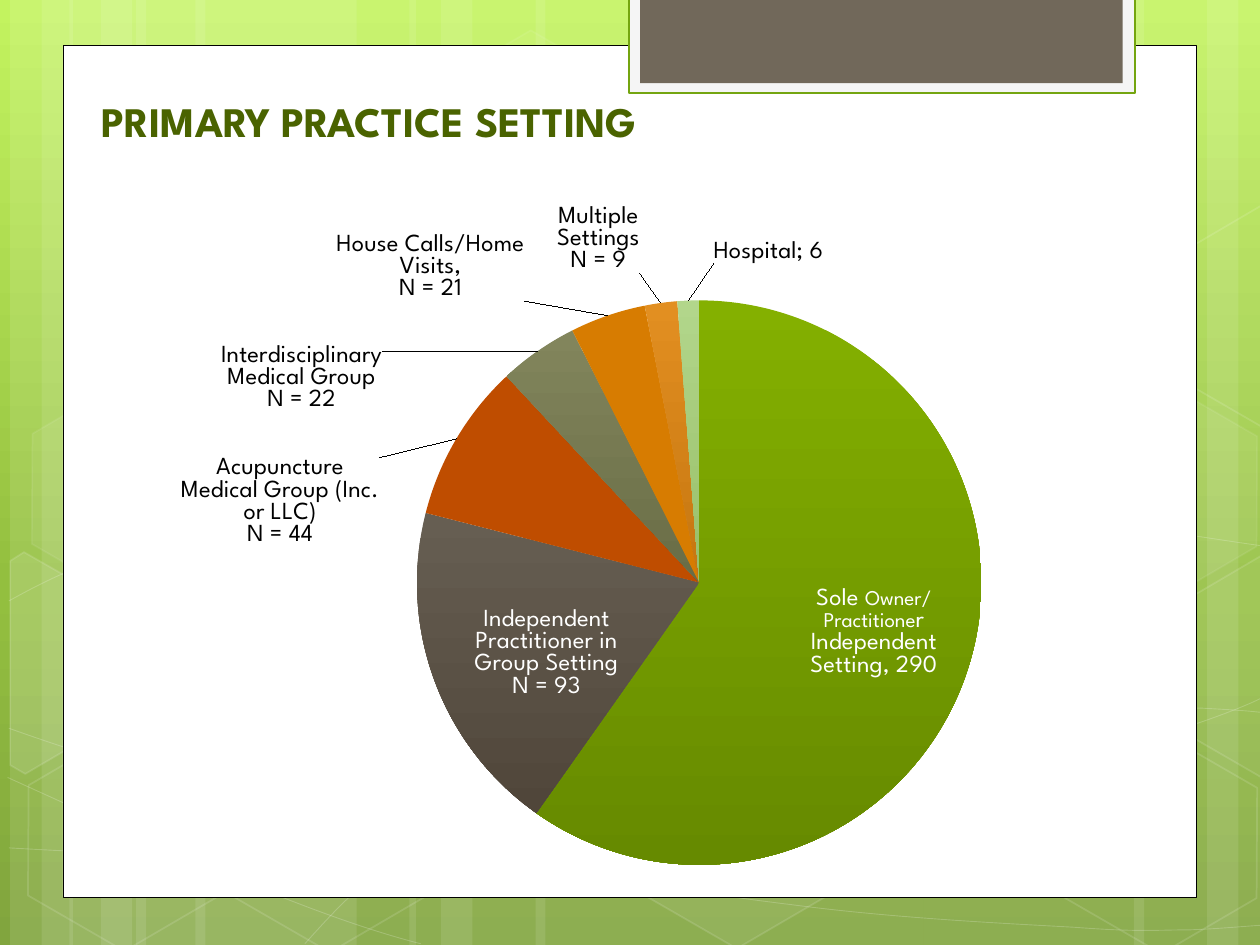
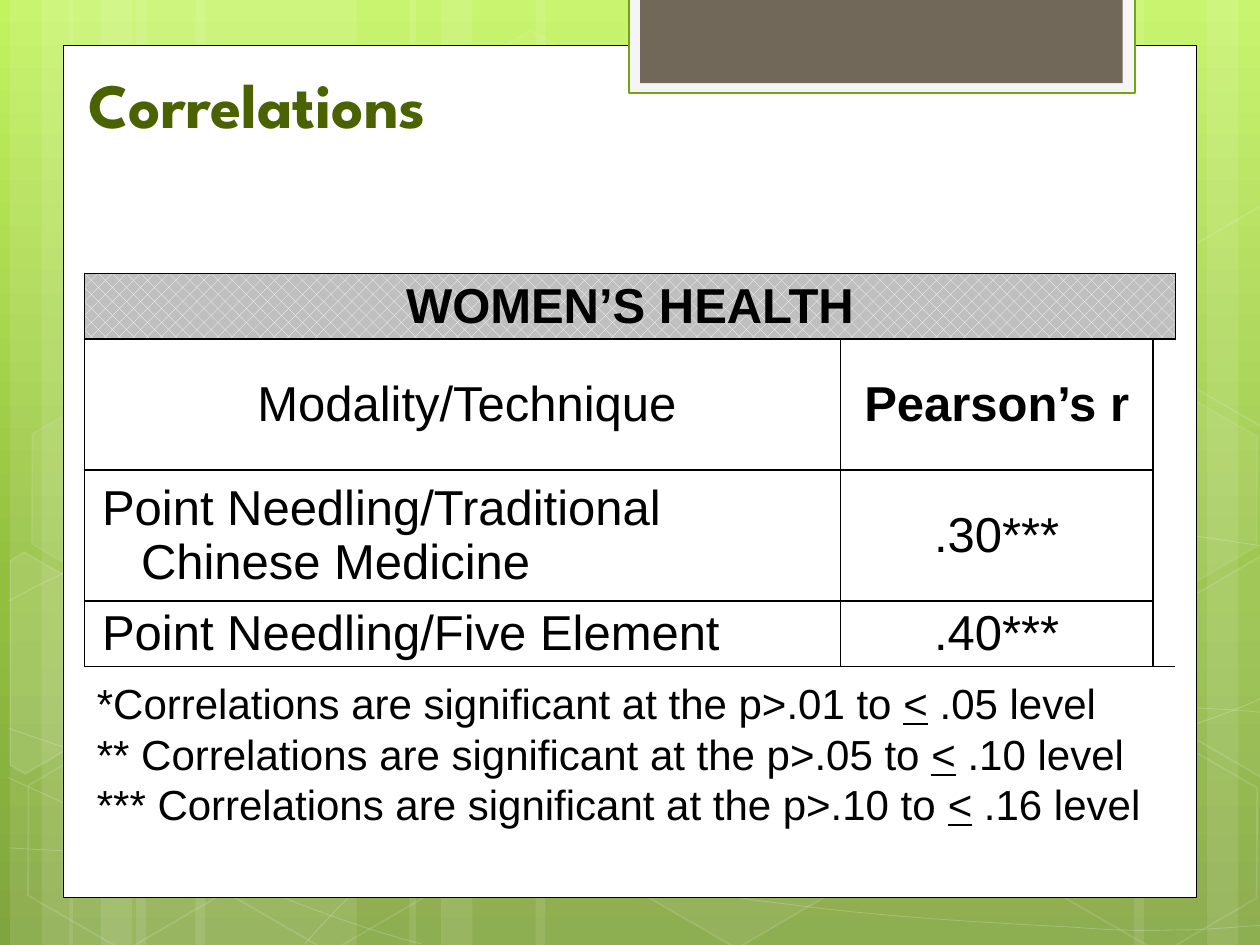
from copy import deepcopy
from math import cos, radians, sin

from lxml.etree import SubElement
from pptx import Presentation
from pptx.chart.data import CategoryChartData
from pptx.dml.color import RGBColor
from pptx.enum.chart import XL_CHART_TYPE as ChartType, XL_LABEL_POSITION as LabelPos
from pptx.enum.dml import MSO_PATTERN as Pattern
from pptx.enum.shapes import MSO_SHAPE as Shape
from pptx.enum.text import MSO_ANCHOR as Anchor, MSO_AUTO_SIZE as AutoSize, PP_ALIGN as Align
from pptx.oxml.ns import qn
from pptx.util import Inches, Pt

# Shared look
HEADING_FONT, BODY_FONT = "League Spartan", "Arial"
WHITE, BLACK, TITLE_GREEN = "FFFFFF", "000000", "4A6300"
BACKDROP_STOPS = [(0, "C3F35F"), (0.62, "93BF3F"), (1, "81A53E")]
BAND_ALPHA, CURVE_ALPHA, TILT = 10, 20, 30

# Backdrop: bands as (left, width)
BANDS = [(1.08, 1.75), (0.08, 0.5), (0.33, 0.83), (1.55, 1.75), (0.55, 0.5), (0.8, 0.83),
         (7.33, 1.75), (9.58, 0.5), (9, 0.83), (4.25, 3.08), (3.25, 0.5), (3.5, 0.83)]
# Bezier chains: a start point, then two handles and an end for every piece
CURVES = [
    [(0.07, 6.73), (0.61, 6.76), (1.15, 6.79), (1.9, 6.78), (2.65, 6.77), (3.58, 6.75),
     (4.58, 6.65), (5.58, 6.55), (7, 6.36), (7.92, 6.17), (8.83, 5.98), (9.77, 5.68),
     (10.07, 5.51)],
    [(0.07, 4.77), (0.36, 4.61), (0.65, 4.46), (1.21, 4.31), (1.78, 4.16), (2.59, 3.94),
     (3.47, 3.87), (4.36, 3.8), (5.44, 3.79), (6.54, 3.87), (7.64, 3.95), (9.47, 4.26),
     (10.07, 4.34)],
    [(0.06, 6.17), (1.27, 6.72), (2.47, 7.27), (3.34, 7.49)],
    [(0.07, 5.78), (0.38, 5.89), (0.7, 6), (1.28, 6.16), (1.86, 6.31), (2.73, 6.56),
     (3.57, 6.73), (4.4, 6.9), (5.45, 7.08), (6.28, 7.18), (7.11, 7.29), (8, 7.33),
     (8.53, 7.36), (9.05, 7.4), (9.19, 7.38), (9.45, 7.38), (9.71, 7.37), (9.89, 7.35),
     (10.07, 7.34)],
    [(2.42, 7.49), (2.6, 7.29), (2.78, 7.09), (3.02, 6.91), (3.26, 6.73), (3.6, 6.53),
     (3.88, 6.39), (4.16, 6.25), (4.33, 6.19), (4.7, 6.09), (5.06, 5.99), (5.73, 5.85),
     (6.08, 5.78), (6.44, 5.71), (6.49, 5.71), (6.8, 5.69), (7.11, 5.66), (7.6, 5.63),
     (7.94, 5.62), (8.29, 5.61), (8.86, 5.62), (8.86, 5.62), (9.08, 5.62), (9.3, 5.62),
     (9.53, 5.62), (9.71, 5.63), (9.88, 5.64), (9.97, 5.65), (10.06, 5.66), (10.03, 5.65),
     (10.06, 5.66)],
]
# Hexagons as (left, top, fill alpha, line alpha)
HEXAGONS = [(3.34, 0.36, 4, 8), (4.97, 5.89, 6, 12), (0.11, 5.91, None, 12),
            (0.14, 3.12, 7, 8), (1.74, 5.92, None, 12), (7.53, 4.53, 10, 12),
            (8.34, 5.93, None, 12), (8.34, 3.14, 7, 8)]
# Hexagons cut by the slide edge as (centre, corners, fill alpha)
CUT_HEXAGONS = [
    ((0.36, 5.35), [(0.08, 4.45), (0.19, 4.38), (0.96, 4.82), (0.95, 5.7), (0.2, 6.14),
                    (0.08, 6.07)], 10),
    ((9.85, 5.2), [(9.26, 4.85), (10.01, 4.41), (10.09, 4.46), (10.09, 6.13), (10.02, 6.17),
                   (9.26, 5.73)], 4),
    ((9.85, 2.41), [(9.26, 2.07), (10.01, 1.63), (10.1, 1.68), (10.09, 3.35), (10.02, 3.39),
                    (9.26, 2.95)], None),
]
# Panel and tab as (left, top, width, height, fill, line, line width)
PANELS = [(0.5, 0.36, 9, 6.76, WHITE, BLACK, 0.5),
          (4.99, -0.02, 4.02, 0.76, "F5F5F5", "74A510", 1.25),
          (5.08, -0.02, 3.83, 0.68, "71685A", None, 0)]

# Slide 1: category, count, colours from top to bottom, label colour,
# label position, label shift, label lines of (text, size)
SETTINGS = [
    ("Sole Owner/Practitioner Independent Setting", 290, ("84B000", "668A00"), WHITE,
     LabelPos.CENTER, (0.04, 0.01),
     [[("Sole ", 14), ("Owner/", 12)], [("Practitione", 12), ("r", 14)],
      [("Independent", 14)], [("Setting, 290", 14)]]),
    ("Independent Practitioner in Group Setting", 93, ("665E52", "50463A"), WHITE,
     LabelPos.CENTER, (-0.02, 0.03),
     [[("Independent", 14)], [("Practitioner in", 14)], [("Group Setting", 14)],
      [("N = 93", 14)]]),
    ("Acupuncture Medical Group (Inc. or LLC)", 44, ("BF4D00",), BLACK,
     LabelPos.OUTSIDE_END, (-0.07, 0.15),
     [[("Acupuncture Medical Group (Inc. or LLC)", 14)], [("N = 44", 14)]]),
    ("Interdisciplinary Medical Group", 22, ("82855C", "696D46"), BLACK,
     LabelPos.OUTSIDE_END, (-0.15, 0.09),
     [[("Interdisciplinary Medical Group", 14)], [("N = 22", 14)]]),
    ("House Calls/Home Visits", 21, ("D77C01",), BLACK,
     LabelPos.OUTSIDE_END, (-0.08, -0.01),
     [[("House Calls/Home Visits,", 14)], [("N = 21", 14)]]),
    ("Multiple Settings", 9, ("E28F21", "C67610"), BLACK,
     LabelPos.OUTSIDE_END, (-0.02, -0.03),
     [[("Multiple", 14)], [("Settings", 14)], [("N = 9", 14)]]),
    ("Hospital", 6, ("B2D68B", "98BF68"), BLACK, LabelPos.OUTSIDE_END, (0.08, -0.04), None),
]
PIE_AREA = {"x": 0.32, "y": 0.14, "w": 0.56, "h": 0.86}

# Slide 2: rows of (text, bold, centred, hanging indent)
TABLE_ROWS = [
    [("WOMEN’S HEALTH", True, True, False)],
    [("Modality/Technique", False, True, True), ("Pearson’s r", True, True, False)],
    [("Point Needling/Traditional Chinese Medicine", False, False, True),
     (".30***", False, True, False)],
    [("Point Needling/Five Element", False, False, True), (".40***", False, True, False)],
]
COLUMN_WIDTHS, ROW_HEIGHTS = [6, 2.48, 0.1], [0.52, 1.04, 1.04, 0.52]
LAST_COLUMN_SIDES = ["LRTB", "LT", "L", "LB"]
PLAIN_TABLE_STYLE = "{2D5ABB26-0587-4C30-8999-92F81FD0307C}"
FOOTNOTES = [("*", ".01", ".05"), ("** ", ".05", ".10"), ("*** ", ".10", ".16")]


def color(value):
    return RGBColor.from_string(value)


def style_font(font, size, name, value):
    font.size, font.name, font.color.rgb = Pt(size), name, color(value)


def add_span(para, text, size, name, value, bold=False, underline=False):
    span = para.add_run()
    span.text = text
    style_font(span.font, size, name, value)
    span.font.bold, span.font.underline = bold, underline


def paint(shape, fill=None, line=None, line_width=1, fill_alpha=100, line_alpha=100):
    """Set fill and line, with opacity in percent; None leaves that part empty."""
    shape.shadow.inherit = False
    for form, value in ((shape.fill, fill), (shape.line.fill, line)):
        if value:
            form.solid()
            form.fore_color.rgb = color(value)
        else:
            form.background()
    if line:
        shape.line.width = Pt(line_width)
    for route, alpha in (("a:solidFill", fill_alpha), ("a:ln/a:solidFill", line_alpha)):
        for solid in shape.element.spPr.xpath(route):
            if alpha < 100:
                SubElement(solid[0], qn("a:alpha"), val=str(alpha * 1000))


def add_outline(slide, points, close):
    start, *rest = [(Inches(x), Inches(y)) for x, y in points]
    builder = slide.shapes.build_freeform(*start)
    builder.add_line_segments(rest, close=close)
    return builder.convert_to_shape()


def add_curve(slide, chain):
    curve = add_outline(slide, chain[::3], False)
    for piece, segment in enumerate(curve.element.xpath(".//a:lnTo")):
        segment.tag = qn("a:cubicBezTo")
        for index, (x, y) in enumerate(chain[3 * piece + 1:3 * piece + 3]):
            handle = SubElement(segment, qn("a:pt"), x=str(Inches(x) - curve.left),
                                y=str(Inches(y) - curve.top))
            segment.insert(index, handle)
    return curve


def add_tilted_outline(slide, center, corners):
    """Turn the corners back around the centre, then tilt the finished shape."""
    c, s = cos(radians(TILT)), sin(radians(TILT))
    offsets = [(x - center[0], y - center[1]) for x, y in corners]
    level = [(center[0] + x * c + y * s, center[1] - x * s + y * c) for x, y in offsets]
    shape = add_outline(slide, level, True)
    shape.rotation = TILT
    return shape


def add_preset(slide, kind, *box):
    return slide.shapes.add_shape(kind, *map(Inches, box))


def build_backdrop(layout, slide):
    """Draw the shared parts on a slide, then hand them to its layout."""
    fill = layout.background.fill
    fill.gradient()
    fill.gradient_angle = 270
    stop_list = layout.element.find(".//" + qn("a:gsLst"))
    stop_list.append(deepcopy(stop_list[-1]))
    for stop, (position, value) in zip(fill.gradient_stops, BACKDROP_STOPS):
        stop.position, stop.color.rgb = position, color(value)

    parts = []
    for left, width in BANDS:
        parts.append(add_preset(slide, Shape.RECTANGLE, left, 0, width, 7.5))
        paint(parts[-1], WHITE, fill_alpha=BAND_ALPHA)
    for chain in CURVES:
        parts.append(add_curve(slide, chain))
        paint(parts[-1], None, WHITE, 0.5, line_alpha=CURVE_ALPHA)
    for left, top, fill_alpha, line_alpha in HEXAGONS:
        hexagon = add_preset(slide, Shape.HEXAGON, left, top, 1.75, 1.52)
        hexagon.rotation, hexagon.adjustments[0] = TILT, 0.285
        paint(hexagon, WHITE if fill_alpha else None, WHITE, 1, fill_alpha or 100, line_alpha)
        parts.append(hexagon)
    for center, corners, fill_alpha in CUT_HEXAGONS:
        parts.append(add_tilted_outline(slide, center, corners))
        paint(parts[-1], WHITE if fill_alpha else None, WHITE, 1, fill_alpha or 100, 12)
    for *box, panel_fill, line, line_width in PANELS:
        parts.append(add_preset(slide, Shape.RECTANGLE, *box))
        paint(parts[-1], panel_fill, line, line_width)
    for number, part in enumerate(parts, 100):
        part.element.nvSpPr.cNvPr.set("id", str(number))
        layout.shapes.element.append(part.element)


def set_title(slide, text, size, box, align):
    title = slide.shapes.title
    title.left, title.top, title.width, title.height = map(Inches, box)
    frame = title.text_frame
    frame.auto_size, frame.vertical_anchor = AutoSize.NONE, Anchor.BOTTOM
    frame.paragraphs[0].alignment = align
    add_span(frame.paragraphs[0], text, size, HEADING_FONT, TITLE_GREEN, bold=True)


def manual_layout(parent, index, values, inner=False):
    layout = SubElement(parent, qn("c:layout"))
    parent.insert(index, layout)
    manual = SubElement(layout, qn("c:manualLayout"))
    if inner:
        SubElement(manual, qn("c:layoutTarget"), val="inner")
        for mode in ("c:xMode", "c:yMode"):
            SubElement(manual, qn(mode), val="edge")
    for name, value in values.items():
        SubElement(manual, qn("c:" + name), val=str(value))


def add_settings_pie(slide):
    data = CategoryChartData(number_format="###0")
    data.categories = [setting[0] for setting in SETTINGS]
    data.add_series("Series 1", [setting[1] for setting in SETTINGS])
    box = map(Inches, (0.75, 1.25, 8, 5.92))
    chart = slide.shapes.add_chart(ChartType.PIE, *box, data).chart
    chart.has_title = chart.has_legend = False
    style_font(chart.font, 10, HEADING_FONT, BLACK)
    chart.plots[0].vary_by_categories = True
    series = chart.plots[0].series[0]
    labels = series.data_labels
    labels.show_value = labels.show_category_name = True

    for index, (_, _, shades, text_color, position, shift, lines) in enumerate(SETTINGS):
        point = series.points[index]
        fill = point.format.fill
        if len(shades) == 1:
            fill.solid()
            fill.fore_color.rgb = color(shades[0])
        else:
            fill.gradient()
            fill.gradient_angle = 270
            for stop, shade in zip(fill.gradient_stops, shades):
                stop.color.rgb = color(shade)
        point.format.line.fill.background()
        label = point.data_label
        if lines:
            frame = label.text_frame
            for number, spans in enumerate(lines):
                para = frame.add_paragraph() if number else frame.paragraphs[0]
                for text, size in spans:
                    add_span(para, text, size, HEADING_FONT, text_color)
        else:
            style_font(label.font, 14, HEADING_FONT, text_color)
        label.position = position
        tag = labels._element.findall(qn("c:dLbl"))[index]
        tag.find(qn("c:showCatName")).set("val", "1")
        SubElement(tag, qn("c:separator")).text = "; "
        manual_layout(tag, 1, dict(zip("xy", shift)))

    plot_area = chart.element.find(".//" + qn("c:plotArea"))
    for old in plot_area.findall(qn("c:layout")):
        plot_area.remove(old)
    manual_layout(plot_area, 0, PIE_AREA, inner=True)


def set_borders(cell, sides):
    properties = cell._tc.get_or_add_tcPr()
    for index, side in enumerate("LRTB"):
        line = SubElement(properties, qn("a:ln" + side), w=str(Pt(1)))
        properties.insert(index, line)
        if side in sides:
            SubElement(SubElement(line, qn("a:solidFill")), qn("a:srgbClr"), val=BLACK)
        else:
            SubElement(line, qn("a:noFill"))


def add_correlation_table(slide):
    box = map(Inches, (0.67, 2.17, sum(COLUMN_WIDTHS), sum(ROW_HEIGHTS)))
    table = slide.shapes.add_table(len(ROW_HEIGHTS), len(COLUMN_WIDTHS), *box).table
    table.first_row = table.horz_banding = False
    table._tbl.tblPr.find(qn("a:tableStyleId")).text = PLAIN_TABLE_STYLE
    for column, width in zip(table.columns, COLUMN_WIDTHS):
        column.width = Inches(width)
    for row, height in zip(table.rows, ROW_HEIGHTS):
        row.height = Inches(height)
    table.cell(0, 0).merge(table.cell(0, 2))

    for row_index, row in enumerate(TABLE_ROWS):
        for column_index in range(len(COLUMN_WIDTHS)):
            cell = table.cell(row_index, column_index)
            cell.margin_top = cell.margin_bottom = 0
            cell.margin_left = cell.margin_right = Inches(0.07 if column_index < 2 else 0)
            cell.vertical_anchor = Anchor.MIDDLE
            if row_index:
                cell.fill.background()
            else:
                cell.fill.patterned()
                cell.fill.pattern = Pattern.PERCENT_25
                cell.fill.fore_color.rgb = color(WHITE)
                cell.fill.back_color.rgb = color("BFBFBF")
            set_borders(cell, LAST_COLUMN_SIDES[row_index] if column_index == 2 else "LRTB")
            if column_index < len(row):
                text, bold, centred, hanging = row[column_index]
                para = cell.text_frame.paragraphs[0]
                para.alignment = Align.CENTER if centred else Align.LEFT
                if hanging:
                    indents = para._p.get_or_add_pPr()
                    indents.set("marL", str(Inches(0.38)))
                    indents.set("indent", str(Inches(-0.31)))
                add_span(para, text, 28, BODY_FONT, BLACK, bold)


def add_footnotes(slide):
    frame = slide.shapes.add_textbox(*map(Inches, (0.67, 5.33, 8.75, 1.31))).text_frame
    frame.word_wrap = True
    for number, (stars, low, high) in enumerate(FOOTNOTES):
        para = frame.add_paragraph() if number else frame.paragraphs[0]
        lead = f"{stars}Correlations are significant at the p>{low} to "
        for text, underline in ((lead, False), ("<", True), (f" {high} level", False)):
            add_span(para, text, 24, BODY_FONT, BLACK, underline=underline)


deck = Presentation()
deck.slide_width, deck.slide_height = Inches(10), Inches(7.5)
title_layout = deck.slide_layouts[5]
setting_page, correlation_page = [deck.slides.add_slide(title_layout) for _ in range(2)]
build_backdrop(title_layout, setting_page)
set_title(setting_page, "PRIMARY PRACTICE SETTING", 24, (-0.33, 0.67, 6.52, 0.54), Align.CENTER)
add_settings_pie(setting_page)
set_title(correlation_page, "Correlations", 36, (0.6, 0.42, 3.42, 0.75), Align.LEFT)
add_correlation_table(correlation_page)
add_footnotes(correlation_page)
deck.save("out.pptx")
